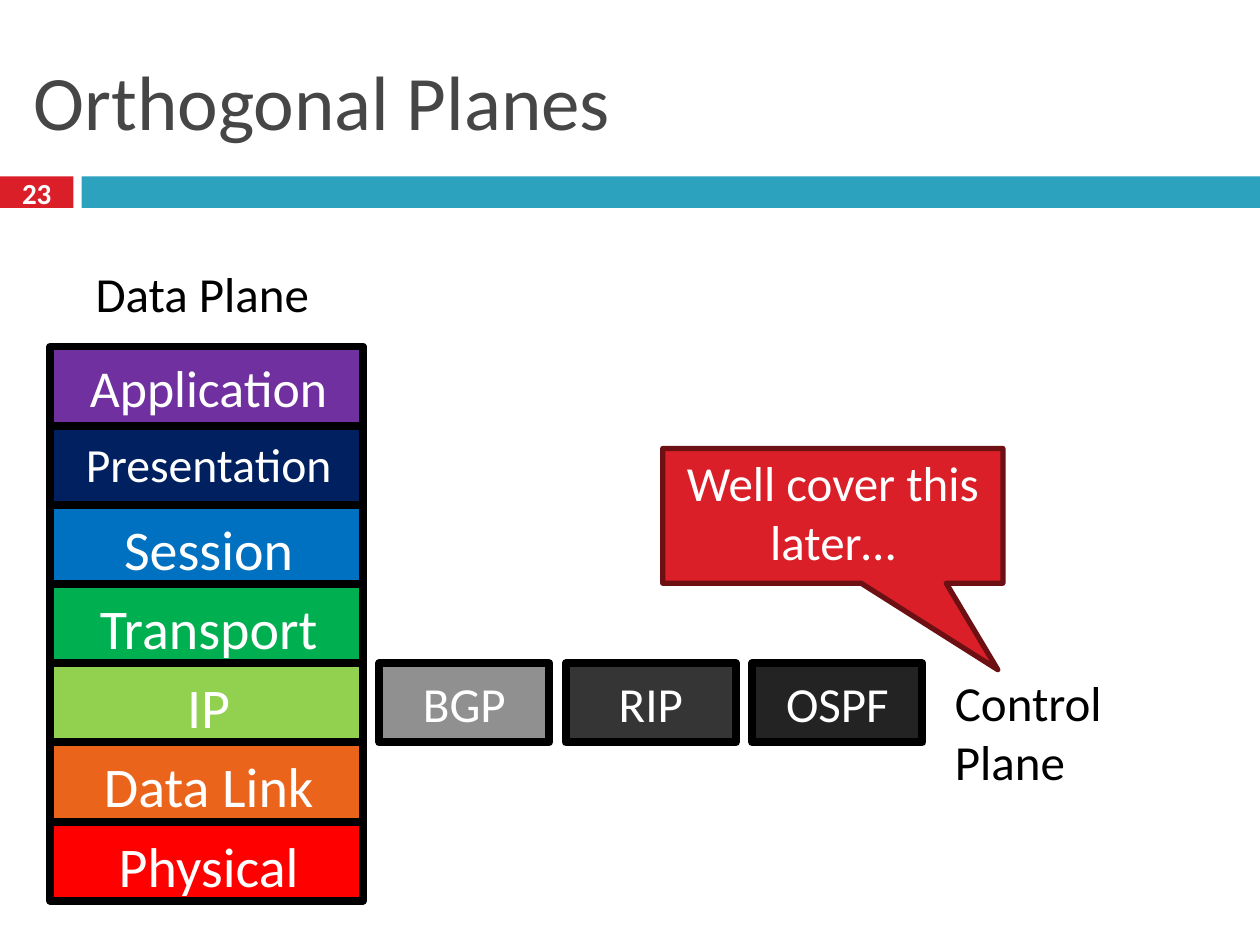
from pptx import Presentation
from pptx.dml.color import RGBColor
from pptx.enum.shapes import MSO_SHAPE as Shape
from pptx.enum.text import MSO_ANCHOR as Anchor, PP_ALIGN as Align
from pptx.util import Pt

COLORS = {
    "red": "DA1F28", "teal": "2DA2BF", "title": "464646", "white": "FFFFFF",
    "black": "000000", "maroon": "6D1014", "purple": "7030A0", "navy": "002060",
    "blue": "0070C0", "green": "00B050", "lime": "92D050", "orange": "EB641B",
    "bright red": "FF0000", "gray": "909090", "charcoal": "353535", "ink": "232323",
}

prs = Presentation()
prs.slide_width, prs.slide_height = Pt(720), Pt(540)
slide = prs.slides.add_slide(prs.slide_layouts[6])


def add_block(kind, box, fill, outline=None, weight=0):
    block = slide.shapes.add_shape(kind, *map(Pt, box))
    block.shadow.inherit = False
    block.fill.solid()
    block.fill.fore_color.rgb = RGBColor.from_string(COLORS[fill])
    if outline:
        block.line.color.rgb = RGBColor.from_string(COLORS[outline])
        block.line.width = Pt(weight)
    else:
        block.line.fill.background()
    return block


def write(holder, words, size, color, align=Align.CENTER, bold=False, **frame_format):
    frame = holder.text_frame
    for name, value in {"word_wrap": True, **frame_format}.items():
        setattr(frame, name, value)
    paragraph = frame.paragraphs[0]
    paragraph.alignment = align
    run = paragraph.add_run()
    run.text = words
    for name, value in {"name": "Calibri", "size": Pt(size), "bold": bold}.items():
        setattr(run.font, name, value)
    run.font.color.rgb = RGBColor.from_string(COLORS[color])


add_block(Shape.RECTANGLE, (0, 100.8, 42, 18), "red")
add_block(Shape.RECTANGLE, (46.6, 100.8, 673.4, 18), "teal")

labels = [
    ("Orthogonal Planes", (12.2, 18, 696, 78), 44, "title", Align.LEFT, False, Anchor.MIDDLE),
    ("23", (0, 98.6, 42, 23.8), 16.6, "white", Align.CENTER, True, Anchor.MIDDLE),
    ("Data Plane", (47.5, 147, 145, 41), 28, "black", Align.LEFT, False, Anchor.TOP),
    ("Control Plane", (538.6, 381, 164, 76), 28, "black", Align.LEFT, False, Anchor.TOP),
]
for words, box, size, color, align, bold, anchor in labels:
    label = slide.shapes.add_textbox(*map(Pt, box))
    write(label, words, size, color, align, bold, vertical_anchor=anchor)

stack_left, stack_top, stack_width, layer_height = 28.8, 198, 178.6, 45.25
layers = [
    ("Application", "purple", 29.6), ("Presentation", "navy", 27.2),
    ("Session", "blue", 32), ("Transport", "green", 32), ("IP", "lime", 32),
    ("Data Link", "orange", 32), ("Physical", "bright red", 32),
]
for row, (words, fill, size) in enumerate(layers):
    box = (stack_left, stack_top + row * layer_height, stack_width, layer_height)
    layer = add_block(Shape.RECTANGLE, box, fill, "black", 4.5)
    write(layer, words, size, "white", vertical_anchor=Anchor.TOP,
          margin_top=Pt(5.4), margin_left=Pt(9.4))

protocol_top = stack_top + 4 * layer_height
protocols = [("BGP", "gray"), ("RIP", "charcoal"), ("OSPF", "ink")]
for column, (words, fill) in enumerate(protocols):
    box = (216.7 + column * 106.6, protocol_top, 97.2, layer_height)
    protocol = add_block(Shape.RECTANGLE, box, fill, "black", 4.5)
    write(protocol, words, 28, "white", vertical_anchor=Anchor.MIDDLE)

callout = add_block(Shape.RECTANGULAR_CALLOUT, (378.7, 256.3, 194.4, 77), "red", "maroon", 3)
callout.adjustments[0], callout.adjustments[1] = 0.485, 1.142
write(callout, "Well cover this later…", 28, "white",
      vertical_anchor=Anchor.TOP, margin_top=Pt(2.2))

prs.save("out.pptx")
